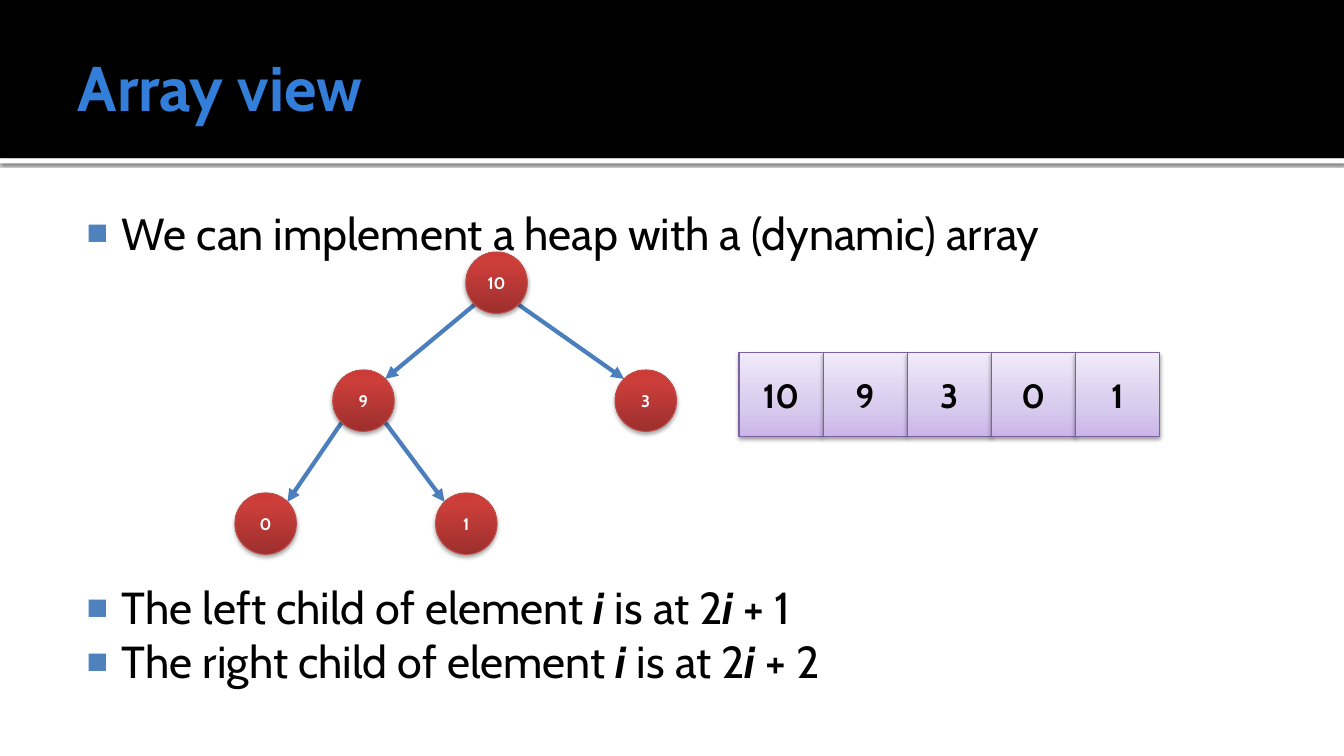
from dataclasses import dataclass
from math import sqrt

from lxml import etree
from pptx import Presentation
from pptx.dml.color import RGBColor
from pptx.enum import shapes, text
from pptx.oxml import ns
from pptx.util import Inches, Pt


@dataclass(frozen=True)
class Theme:
    font: str = "Cabin"
    title_size: int = 45
    body_size: int = 32
    cell_size: int = 24
    node_size: int = 12
    title: str = "337ED9"
    ink: str = "000000"
    paper: str = "FFFFFF"
    bullet: str = "4F81BD"
    edge: str = "4B7EBC"
    node_line: str = "BF4C48"
    cell_line: str = "7D60A0"
    node_stops: tuple = ((0, "9C2F2D"), (80, "CB3E3A"), (100, "CE3B37"))
    cell_stops: tuple = ((0, "C9B5E8"), (35, "D8CBEE"), (100, "F0EAF9"))


THEME = Theme()


def rgb(value):
    return RGBColor.from_string(value)


def add_xml(parent, tag, **attributes):
    return etree.SubElement(parent, ns.qn(tag), attributes)


def add_color(parent, value):
    return add_xml(parent, "a:srgbClr", val=value)


def style_font(font, size, color, bold=False, italic=False):
    font.name, font.size, font.bold, font.italic = THEME.font, Pt(size), bold, italic
    font.color.rgb = rgb(color)


def set_insets(frame, left, top, right, bottom):
    frame.margin_left, frame.margin_top = Inches(left), Inches(top)
    frame.margin_right, frame.margin_bottom = Inches(right), Inches(bottom)


def place(shape, left, top, width, height):
    shape.left, shape.top = Inches(left), Inches(top)
    shape.width, shape.height = Inches(width), Inches(height)


def add_shadow(shape, opacity, blur, distance):
    shape.shadow.inherit = False
    effects = shape.element.spPr.find(ns.qn("a:effectLst"))
    outer = add_xml(effects, "a:outerShdw", blurRad=str(Pt(blur)), dist=str(Pt(distance)),
                    dir="5400000", rotWithShape="0")
    add_xml(add_color(outer, THEME.ink), "a:alpha", val=str(opacity * 1000))


def fill_gradient(shape, stops):
    """Fill from the bottom edge up through the given stops."""
    shape.fill.gradient()
    shape.fill.gradient_angle = 90
    stop_list = shape.element.spPr.find(".//" + ns.qn("a:gsLst"))
    for old in list(stop_list):
        stop_list.remove(old)
    for position, color in stops:
        add_color(add_xml(stop_list, "a:gs", pos=str(position * 1000)), color)


def add_value(group, kind, box, value, stops, line, size, color, shadow):
    """A labelled heap value: a tree node or an array cell."""
    holder = group.shapes.add_shape(kind, *map(Inches, box))
    fill_gradient(holder, stops)
    holder.line.color.rgb, holder.line.width = rgb(line), Pt(0.75)
    add_shadow(holder, *shadow)
    frame = holder.text_frame
    frame.text = str(value)
    frame.word_wrap = False
    frame.vertical_anchor = text.MSO_ANCHOR.MIDDLE
    set_insets(frame, 0, 0, 0, 0)
    label = frame.paragraphs[0]
    label.alignment = text.PP_ALIGN.CENTER
    style_font(label.runs[0].font, size, color, bold=True)


def add_header(slide, title, width, height):
    # Bands go behind the placeholders, the white strip at the very back
    strip_height = 0.05
    for top, band_height, color in ((0, height, THEME.ink), (height, strip_height, THEME.paper)):
        band = slide.shapes.add_shape(shapes.MSO_SHAPE.RECTANGLE, 0, Inches(top),
                                      Inches(width), Inches(band_height))
        band.fill.solid()
        band.fill.fore_color.rgb = rgb(color)
        band.line.fill.background()
        band.shadow.inherit = False
        slide.shapes.element.insert(2, band.element)
    add_shadow(band, 60, 2.5, 0.8)

    heading = slide.shapes.title
    place(heading, 0.67, 0.17, width - 1.33, height - 0.2)
    frame = heading.text_frame
    frame.text = title
    frame.auto_size = text.MSO_AUTO_SIZE.NONE
    frame.vertical_anchor = text.MSO_ANCHOR.MIDDLE
    set_insets(frame, 0.1, 0.05, 0.05, 0.05)
    frame.paragraphs[0].alignment = text.PP_ALIGN.LEFT
    style_font(frame.paragraphs[0].runs[0].font, THEME.title_size, THEME.title, bold=True)


def add_bullets(slide, box, points):
    """Each point is (space before, pieces); every second piece is a variable."""
    body = slide.placeholders[1]
    place(body, *box)
    frame = body.text_frame
    frame.auto_size = text.MSO_AUTO_SIZE.NONE
    frame.vertical_anchor = text.MSO_ANCHOR.TOP
    set_insets(frame, 0.06, 0.1, 0.1, 0.05)
    for index, (space, pieces) in enumerate(points):
        point = frame.add_paragraph() if index else frame.paragraphs[0]
        properties = point._p.get_or_add_pPr()
        properties.set("marL", str(Inches(0.48)))
        properties.set("indent", str(Inches(-0.35)))
        add_color(add_xml(properties, "a:buClr"), THEME.bullet)
        add_xml(properties, "a:buSzPct", val="80000")
        add_xml(properties, "a:buFont", typeface="Arial")
        add_xml(properties, "a:buChar", char="■")
        point.space_before = Pt(space)
        for number, piece in enumerate(pieces):
            run = point.add_run()
            run.text = piece
            variable = number % 2 == 1
            style_font(run.font, THEME.body_size, THEME.ink, variable, variable)


def add_edge(group, start, end):
    edge = group.shapes.add_connector(shapes.MSO_CONNECTOR.STRAIGHT, *map(Inches, start + end))
    edge.line.color.rgb, edge.line.width = rgb(THEME.edge), Pt(3)
    add_xml(edge.line._get_or_add_ln(), "a:tailEnd", type="triangle")
    add_xml(edge.element.spPr, "a:effectLst")


def add_tree(slide, left, top, values):
    """Draw the heap; node i has its children at 2i + 1 and 2i + 2."""
    diameter = 0.61
    offsets = ((2.29, 0), (0.97, 1.17), (3.77, 1.17), (0, 2.39), (1.99, 2.39))
    corners = [(left + x, top + y) for x, y in offsets]
    centres = [(x + diameter / 2, y + diameter / 2) for x, y in corners]
    reach = diameter / 2 / sqrt(2)
    tree = slide.shapes.add_group_shape()

    # Edges run between the diagonal points of parent and child
    for child in range(1, len(values)):
        (px, py), (cx, cy) = centres[(child - 1) // 2], centres[child]
        side = reach if cx > px else -reach
        add_edge(tree, (px + side, py + reach), (cx - side, cy - reach))
    for corner, value in zip(corners, values):
        add_value(tree, shapes.MSO_SHAPE.OVAL, corner + (diameter, diameter), value,
                  THEME.node_stops, THEME.node_line, THEME.node_size, THEME.paper,
                  (35, 3.1, 1.8))


def add_array(slide, left, top, width, values):
    side = width / len(values)
    array = slide.shapes.add_group_shape()
    for index, value in enumerate(values):
        add_value(array, shapes.MSO_SHAPE.RECTANGLE, (left + index * side, top, side, side),
                  value, THEME.cell_stops, THEME.cell_line, THEME.cell_size, THEME.ink,
                  (38, 3.1, 1.6))


def main():
    deck = Presentation()
    deck.slide_width, deck.slide_height = Inches(13.33), Inches(7.5)
    slide = deck.slides.add_slide(deck.slide_layouts[1])
    heap = (10, 9, 3, 0, 1)

    add_header(slide, "Array view", 13.33, 1.57)
    add_bullets(slide, (0.67, 1.94, 12, 5.06), (
        (0, ("We can implement a heap with a (dynamic) array",)),
        (229, ("The left child of element ", "i", " is at 2", "i", " + 1")),
        (0, ("The right child of element ", "i", " is at 2", "i", " + 2")),
    ))
    add_tree(slide, 2.33, 2.5, heap)
    add_array(slide, 7.33, 3.5, 4.17, heap)
    deck.save("out.pptx")


if __name__ == "__main__":
    main()
